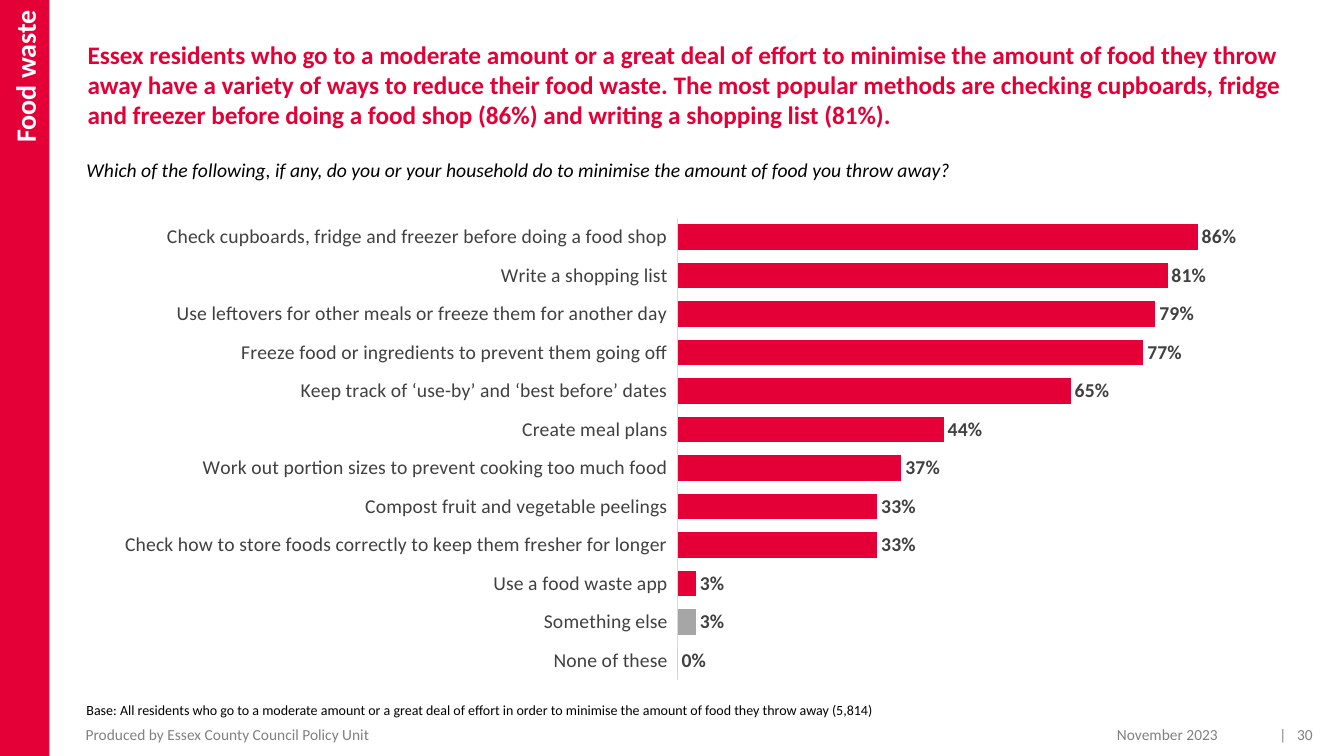
from lxml import etree
from pptx import Presentation
from pptx.chart.data import CategoryChartData
from pptx.dml.color import RGBColor
from pptx.enum.chart import XL_CHART_TYPE as ChartType
from pptx.enum.chart import XL_LABEL_POSITION as LabelPosition
from pptx.enum.chart import XL_TICK_LABEL_POSITION as TickLabels
from pptx.enum.chart import XL_TICK_MARK as TickMark
from pptx.enum.shapes import MSO_SHAPE as Preset
from pptx.enum.text import MSO_ANCHOR as Anchor
from pptx.enum.text import MSO_AUTO_SIZE as AutoSize
from pptx.enum.text import PP_ALIGN as Align
from pptx.oxml.ns import qn
from pptx.util import Emu, Pt

PX = 9144  # 100 px to the inch
FONT = "Calibri"
RED = RGBColor(0xE4, 0x00, 0x37)
WHITE = RGBColor(0xFF, 0xFF, 0xFF)
BLACK = RGBColor(0x00, 0x00, 0x00)
DARK_GREY = RGBColor(0x40, 0x40, 0x40)
FOOTER_GREY = RGBColor(0x80, 0x80, 0x80)
BAR_GREY = RGBColor(0xA6, 0xA6, 0xA6)
AXIS_GREY = RGBColor(0xD9, 0xD9, 0xD9)

HEADLINE = (
    "Essex residents who go to a moderate amount or a great deal of effort to "
    "minimise the amount of food they throw away have a variety of ways to reduce "
    "their food waste. The most popular methods are checking cupboards, fridge and "
    "freezer before doing a food shop (86%) and writing a shopping list (81%)."
)
QUESTION = (
    "Which of the following, if any, do you or your household do to minimise "
    "the amount of food you throw away?"
)
BASE = (
    "Base: All residents who go to a moderate amount or a great deal of effort in "
    "order to minimise the amount of food they throw away (5,814)"
)
METHODS = [
    ("Check cupboards, fridge and freezer before doing a food shop", 0.86),
    ("Write a shopping list", 0.81),
    ("Use leftovers for other meals or freeze them for another day", 0.79),
    ("Freeze food or ingredients to prevent them going off", 0.77),
    ("Keep track of ‘use-by’ and ‘best before’ dates", 0.65),
    ("Create meal plans", 0.44),
    ("Work out portion sizes to prevent cooking too much food", 0.37),
    ("Compost fruit and vegetable peelings", 0.33),
    ("Check how to store foods correctly to keep them fresher for longer", 0.33),
    ("Use a food waste app", 0.03),
    ("Something else", 0.03),
    ("None of these", 0),
]
OTHER_ANSWERS = ("Something else", "None of these")


def px(*lengths):
    return [Emu(length * PX) for length in lengths]


def style(font, size, color, bold=False, italic=False):
    font.name, font.size = FONT, Pt(size)
    font.bold, font.italic = bold, italic
    font.color.rgb = color


def set_insets(frame, insets):
    (frame.margin_left, frame.margin_top,
     frame.margin_right, frame.margin_bottom) = px(*insets)


def add_run(paragraph, text, size, color, **emphasis):
    run = paragraph.add_run()
    run.text = text
    style(run.font, size, color, **emphasis)
    return run


def add_text(slide, box, text, size, color, insets=(10, 5, 10, 5),
             anchor=Anchor.TOP, align=Align.LEFT, grow=False, **emphasis):
    frame = slide.shapes.add_textbox(*px(*box)).text_frame
    frame.word_wrap = True
    frame.auto_size = AutoSize.SHAPE_TO_FIT_TEXT if grow else AutoSize.NONE
    frame.vertical_anchor = anchor
    set_insets(frame, insets)
    paragraph = frame.paragraphs[0]
    paragraph.alignment = align
    add_run(paragraph, text, size, color, **emphasis)
    return paragraph


def add_footer(slide, left, width, text, insets=(10, 5, 0, 5), align=Align.RIGHT):
    return add_text(slide, (left, 721, width, 15), text, 11, FOOTER_GREY,
                    insets=insets, anchor=Anchor.MIDDLE, align=align)


def add_section_band(slide, title):
    band = slide.shapes.add_shape(Preset.RECTANGLE, *px(0, 0, 49, 750))
    band.shadow.inherit = False
    band.fill.solid()
    band.fill.fore_color.rgb = RED
    band.line.fill.background()
    frame = band.text_frame
    frame.vertical_anchor = Anchor.MIDDLE
    set_insets(frame, (10, 10, 10, 5))
    frame._txBody.find(qn("a:bodyPr")).set("vert", "vert270")
    paragraph = frame.paragraphs[0]
    paragraph.alignment = Align.RIGHT
    add_run(paragraph, title, 20, WHITE, bold=True)


def set_plot_layout(chart, x, y, w, h):
    """Fix the inner plot area, in fractions of the chart."""
    plot_area = chart._chartSpace.chart.plotArea
    for old in plot_area.findall(qn("c:layout")):
        plot_area.remove(old)
    layout = etree.Element(qn("c:layout"))
    manual = etree.SubElement(layout, qn("c:manualLayout"))
    settings = [("layoutTarget", "inner"), ("xMode", "edge"), ("yMode", "edge"),
                ("x", x), ("y", y), ("w", w), ("h", h)]
    for tag, value in settings:
        etree.SubElement(manual, qn(f"c:{tag}")).set("val", str(value))
    plot_area.insert(0, layout)


def add_methods_chart(slide):
    methods = CategoryChartData(number_format="0%")
    methods.categories = [name for name, _ in METHODS]
    methods.add_series("Series 1", [share for _, share in METHODS])
    chart = slide.shapes.add_chart(
        ChartType.BAR_CLUSTERED, *px(105, 190, 1167, 485), methods).chart
    chart.has_legend = chart.has_title = False
    style(chart.font, 10, BLACK)
    set_plot_layout(chart, 0.486, 0.054, 0.514, 0.946)

    answers = chart.category_axis
    answers.reverse_order = True
    answers.major_tick_mark = answers.minor_tick_mark = TickMark.NONE
    answers.tick_label_position = TickLabels.LOW
    answers.format.line.color.rgb = AXIS_GREY
    answers.format.line.width = Pt(0.75)
    style(answers.tick_labels.font, 14, DARK_GREY)

    shares = chart.value_axis
    shares.minimum_scale, shares.maximum_scale = 0, 1
    shares.has_major_gridlines = False
    shares.tick_labels.number_format = "0%"
    shares.tick_labels.number_format_is_linked = False
    shares.visible = False

    plot = chart.plots[0]
    plot.gap_width = 50
    plot.vary_by_categories = False
    bars = plot.series[0]
    bars.format.fill.solid()
    bars.format.fill.fore_color.rgb = RED
    for index, (name, _) in enumerate(METHODS):
        if name in OTHER_ANSWERS:
            fill = bars.points[index].format.fill
            fill.solid()
            fill.fore_color.rgb = BAR_GREY

    labels = bars.data_labels
    labels.show_value = True
    labels.position = LabelPosition.OUTSIDE_END
    labels.number_format = "0%"
    labels.number_format_is_linked = False
    style(labels.font, 14, DARK_GREY, bold=True)


def add_page_number(slide, number):
    paragraph = add_footer(slide, 1217, 85, "| ")
    # Character spacing widens the gap after the bar
    paragraph.runs[0].font._element.set("spc", "250")
    add_run(paragraph, number, 11, FOOTER_GREY)


def main():
    deck = Presentation()
    deck.slide_width, deck.slide_height = px(1333, 750)
    slide = deck.slides.add_slide(deck.slide_layouts[6])

    add_text(slide, (76, 152, 1207, 34), QUESTION, 14, BLACK, grow=True, italic=True)
    add_methods_chart(slide)
    add_section_band(slide, "Food waste")
    add_page_number(slide, "30")
    add_footer(slide, 76, 654, "Produced by Essex County Council Policy Unit",
               insets=(9, 5, 10, 5), align=Align.LEFT)
    add_text(slide, (77, 34, 1225, 118), HEADLINE, 18, RED,
             insets=(10, 5, 10, 0), bold=True)
    add_footer(slide, 968, 240, "November 2023")
    add_text(slide, (76, 691, 834, 27), BASE, 10, BLACK, grow=True)
    deck.save("out.pptx")


if __name__ == "__main__":
    main()
